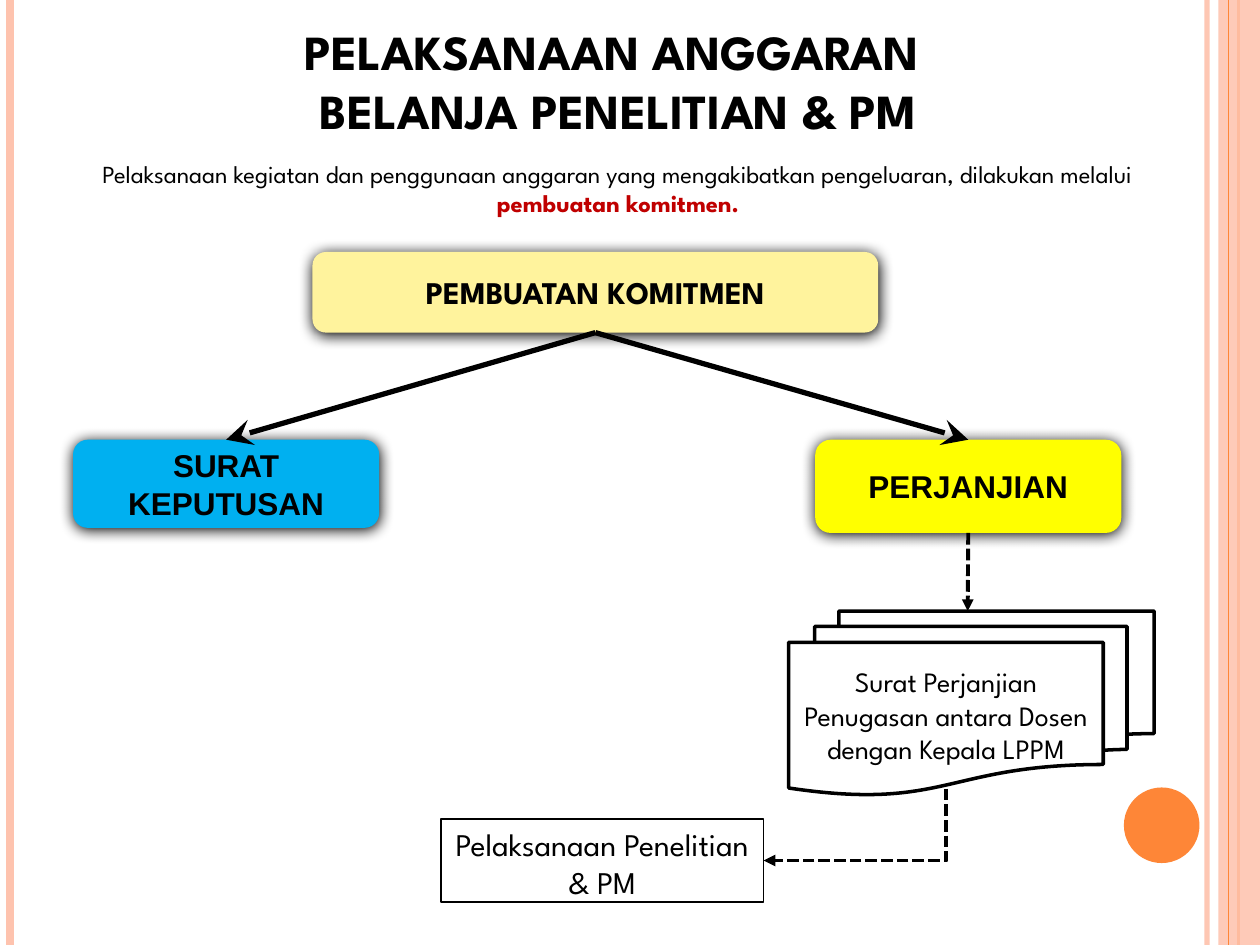
from dataclasses import dataclass

from lxml import etree
from pptx import Presentation
from pptx.dml.color import RGBColor
from pptx.enum.dml import MSO_LINE
from pptx.enum.shapes import MSO_CONNECTOR as CONN, MSO_SHAPE as SHAPE
from pptx.enum.text import MSO_ANCHOR as ANCHOR, PP_ALIGN as ALIGN
from pptx.oxml.ns import qn
from pptx.util import Inches, Pt


@dataclass(frozen=True)
class Theme:
    ink: str = "000000"
    accent: str = "FE8637"
    pale: str = "FEC3AE"
    alert: str = "C00000"
    cream: str = "FFF39D"
    yellow: str = "FFFF00"
    blue: str = "00B0F0"
    font: str = "League Spartan"
    box_font: str = "Arial"
    title: int = 28
    heading: int = 18
    body: int = 16
    intro: int = 14


T = Theme()


def add_xml(parent, tag, **attrs):
    return etree.SubElement(parent, qn(tag), {k: str(v) for k, v in attrs.items()})


def set_alpha(element, percent):
    color = next(element.iter(qn("a:srgbClr")))
    add_xml(color, "a:alpha", val=percent * 1000)


def write(sp, text, size, font=T.font, color=T.ink, bold=False, anchor=ANCHOR.MIDDLE, new=True):
    tf = sp.text_frame
    tf.word_wrap = True
    tf.vertical_anchor = anchor
    p = tf.paragraphs[0]
    p.alignment = ALIGN.CENTER
    for i, line in enumerate(text.split("\n")):
        if i:
            p.add_line_break()
        r = p.add_run()
        r.text = line
        r.font.name = font
        r.font.size = Pt(size)
        r.font.bold = bold
        r.font.color.rgb = RGBColor.from_string(color)


def add_shape(s, kind, box, fill=None, line=None):
    sp = s.shapes.add_shape(kind, *map(Inches, box))
    sp.shadow.inherit = False
    if fill:
        sp.fill.solid()
        sp.fill.fore_color.rgb = RGBColor.from_string(fill)
    else:
        sp.fill.background()
    if line:
        sp.line.color.rgb = RGBColor.from_string(T.ink)
        sp.line.width = Pt(line)
    else:
        sp.line.fill.background()
    return sp


def add_line(s, start, end, width, color=T.ink, head=None, head_size="med", dashed=False, kind=CONN.STRAIGHT):
    c = s.shapes.add_connector(kind, *map(Inches, (*start, *end)))
    c.line.color.rgb = RGBColor.from_string(color)
    c.line.width = Pt(width)
    if dashed:
        c.line.dash_style = MSO_LINE.SQUARE_DOT
    if head:
        add_xml(c.line._get_or_add_ln(), "a:tailEnd", type=head, w=head_size, len=head_size)
    add_xml(c._element.spPr, "a:effectLst")
    return c


def add_corner_arrow(s, start, end):
    (x1, y1), (x2, y2) = start, end
    w, h = y2 - y1, x1 - x2
    cx, cy = (x1 + x2) / 2, (y1 + y2) / 2
    c = add_line(s, (cx - w / 2, cy - h / 2), (cx + w / 2, cy + h / 2), 2.25,
                 head="triangle", dashed=True, kind=CONN.ELBOW)
    spPr = c._element.spPr
    spPr.find(qn("a:xfrm")).set("rot", "5400000")
    spPr.find(qn("a:prstGeom")).set("prst", "bentConnector2")


def add_card(s, box, text, fill, font=T.box_font):
    sp = add_shape(s, SHAPE.ROUNDED_RECTANGLE, box, fill)
    effects = sp._element.spPr.find(qn("a:effectLst"))
    shadow = add_xml(effects, "a:outerShdw", blurRad=Pt(8.5), dist=Pt(1), dir=5400000,
                     algn="ctr", rotWithShape=0)
    add_xml(shadow, "a:srgbClr", val=T.ink)
    write(sp, text, T.heading, font, bold=True)
    return sp


def add_frame(s, width, height):
    def rule(x, weight, color):
        return add_line(s, (x, 0), (x, height), weight, color)

    set_alpha(rule(width - 0.42, 3, T.pale)._element, 93)
    rule(0.08, 4.5, T.pale)
    rule(width - 0.17, 1.5, T.accent)
    band = add_shape(s, SHAPE.RECTANGLE, (width - 0.33, 0, 0.33, height), T.pale)
    set_alpha(band._element.spPr, 87)
    rule(width - 0.25, 0.75, T.accent)
    add_shape(s, SHAPE.OVAL, (width - 1.08, height - 1.25, 0.6, 0.6), T.accent)


def add_header(s, left, top, width):
    title = s.shapes.add_textbox(*map(Inches, (left, top, width, 1.12)))
    write(title, "PELAKSANAAN ANGGARAN \nBELANJA PENELITIAN & PM", T.title, bold=True)
    intro = s.shapes.add_textbox(*map(Inches, (left, top + 1.13, width, 0.57)))
    write(intro, "Pelaksanaan kegiatan dan penggunaan anggaran yang mengakibatkan "
          "pengeluaran, dilakukan melalui ", T.intro, anchor=ANCHOR.TOP)
    write(intro, "pembuatan komitmen.", T.intro, color=T.alert, bold=True, anchor=ANCHOR.TOP)


def add_flow(s, left, top):
    def at(x, y, *size):
        return (left + x, top + y, *size)

    commitment = add_card(s, at(1.9, 0, 4.49, 0.64), "PEMBUATAN KOMITMEN", T.cream, T.font)
    agreement = add_card(s, at(5.89, 1.49, 2.43, 0.74), "PERJANJIAN", T.yellow)
    decree = add_card(s, at(0, 1.49, 2.43, 0.7), "SURAT KEPUTUSAN", T.blue)
    for card, x in ((decree, 1.21), (agreement, 7.1)):
        c = add_line(s, at(4.14, 0.64), at(x, 1.49), 3, head="stealth", head_size="lg")
        c.begin_connect(commitment, 2)
        c.end_connect(card, 0)

    letters = add_shape(s, SHAPE.FLOWCHART_MULTIDOCUMENT, at(5.68, 2.85, 2.9, 1.46), line=2)
    write(letters, "Surat Perjanjian Penugasan antara Dosen dengan Kepala LPPM", T.body)
    work = add_shape(s, SHAPE.RECTANGLE, at(2.92, 4.5, 2.56, 0.66), line=0.75)
    write(work, "Pelaksanaan Penelitian & PM", T.heading, anchor=ANCHOR.TOP)
    add_corner_arrow(s, at(6.93, 4.26), at(5.48, 4.83))
    c = add_line(s, at(7.1, 2.23), at(7.1, 2.85), 2.25, head="triangle", dashed=True)
    c.begin_connect(agreement, 2)


def main():
    prs = Presentation()
    prs.slide_width, prs.slide_height = Inches(10), Inches(7.5)
    s = prs.slides.add_slide(prs.slide_layouts[6])
    add_frame(s, 10, 7.5)
    add_header(s, 0.31, 0.08, 9.19)
    add_flow(s, 0.58, 2)
    prs.save("out.pptx")


if __name__ == "__main__":
    main()
